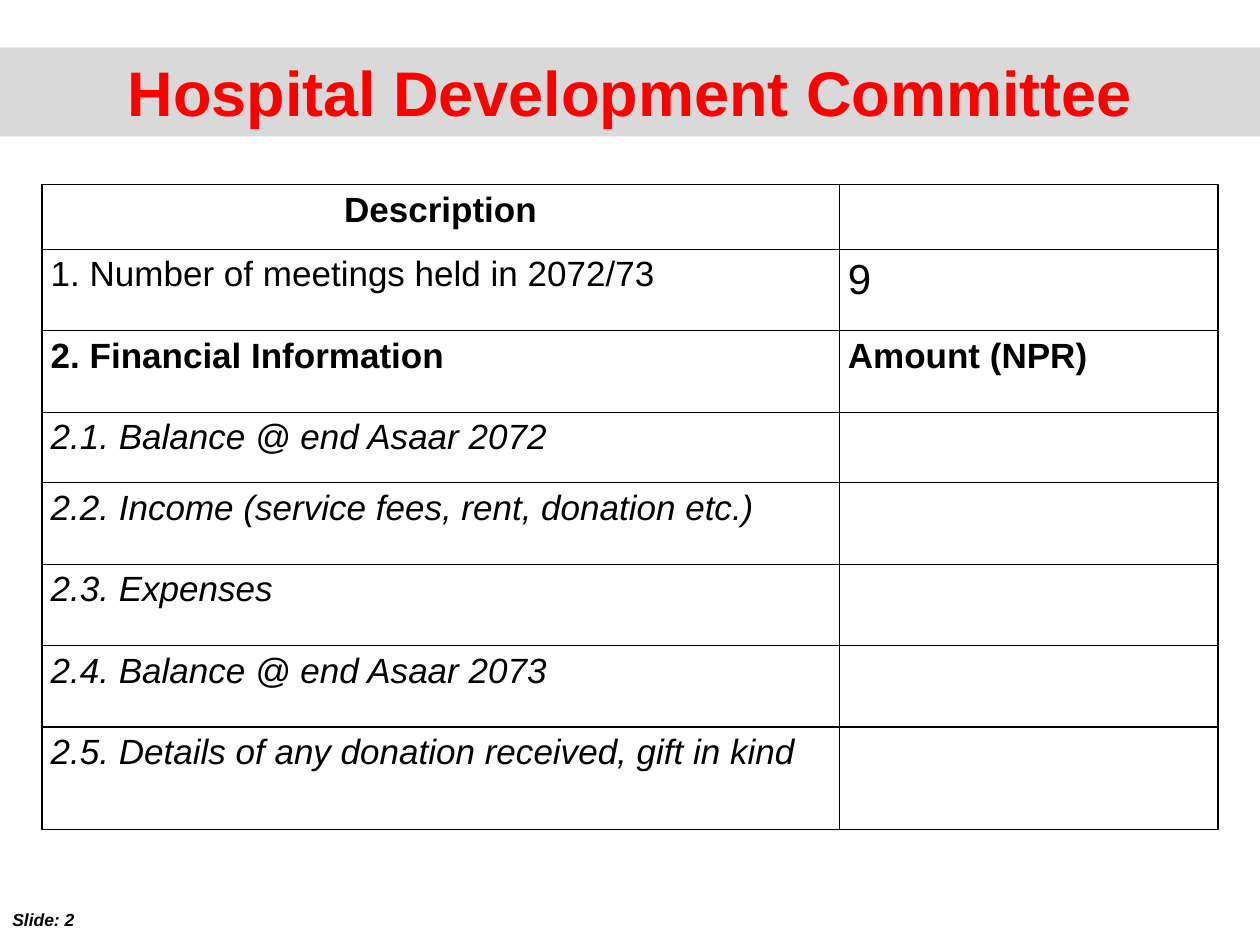
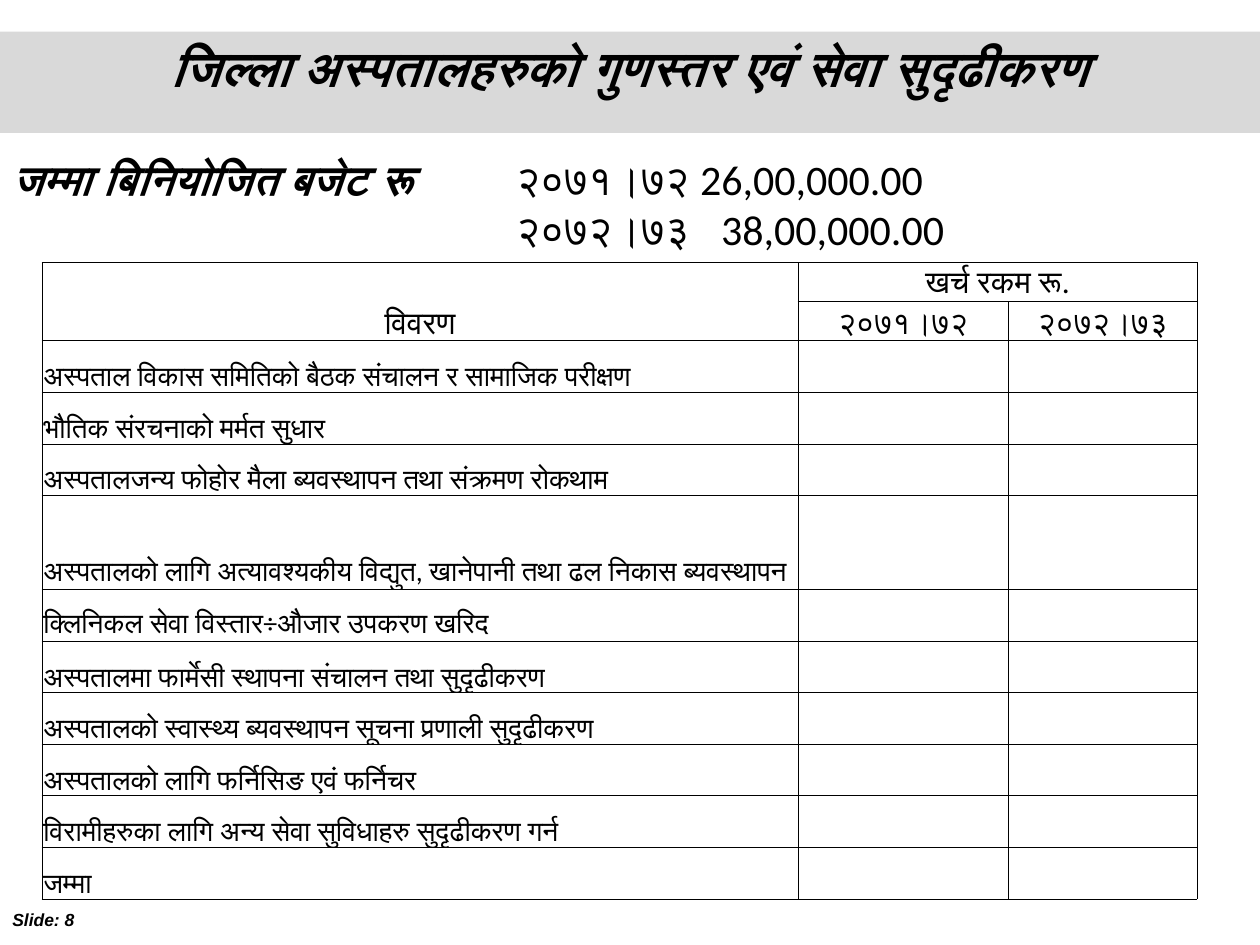
import pptx
import pptx.dml.color
import pptx.enum.text
import pptx.oxml
import pptx.oxml.ns
import pptx.util
import lxml.etree

Pt = pptx.util.Pt
ALIGN = pptx.enum.text.PP_ALIGN
ANCHOR = pptx.enum.text.MSO_ANCHOR
BLACK, WHITE, RED, BAND = "000000", "FFFFFF", "FF0000", "D9D9D9"


def color(value):
    return pptx.dml.color.RGBColor.from_string(value)


def add_child(parent, tag, **attributes):
    values = {name: str(value) for name, value in attributes.items()}
    return lxml.etree.SubElement(parent, pptx.oxml.ns.qn(tag), values)


class SlideBuilder:
    def __init__(self, deck):
        self.deck = deck
        self.slide = None

    def start(self, number):
        self.slide = self.deck.slides.add_slide(self.deck.slide_layouts[5])
        frame = self.text_box(0, 516, 66, 19.5)
        self.run(frame.paragraphs[0], f"Slide: {number}", 10, bold=True, italic=True)

    def run(self, para, text, size, font="Arial", fill=BLACK, bold=False, italic=False):
        span = para.add_run()
        span.text = text
        span.font.name = font
        span.font.size = Pt(size)
        span.font.bold = bold
        span.font.italic = italic
        span.font.color.rgb = color(fill)

    def title(self, text, top, height, size, **style):
        box = self.slide.shapes.title
        box.left, box.top, box.width, box.height = Pt(0), Pt(top), Pt(720), Pt(height)
        box.fill.solid()
        box.fill.fore_color.rgb = color(BAND)
        frame = box.text_frame
        frame.auto_size = pptx.enum.text.MSO_AUTO_SIZE.NONE
        frame.vertical_anchor = ANCHOR.TOP
        para = frame.paragraphs[0]
        para.alignment = ALIGN.CENTER
        self.run(para, text, size, bold=True, **style)

    def text_box(self, left, top, width, height):
        box = self.slide.shapes.add_textbox(Pt(left), Pt(top), Pt(width), Pt(height))
        box.text_frame.word_wrap = True
        return box.text_frame

    def tab_stops(self, para, *positions):
        stops = add_child(para._p.get_or_add_pPr(), "a:tabLst")
        for position in positions:
            add_child(stops, "a:tab", pos=int(Pt(position)), algn="l")

    def table(self, left, top, widths, heights, border, margins, anchor):
        frame = self.slide.shapes.add_table(
            len(heights), len(widths), Pt(left), Pt(top), Pt(sum(widths)), Pt(sum(heights)))
        table = frame.table
        table.first_row = table.horz_banding = False
        for column, width in zip(table.columns, widths):
            column.width = Pt(width)
        for row, height in zip(table.rows, heights):
            row.height = Pt(height)
        for cell in table.iter_cells():
            self.cell_style(cell, border, margins, anchor)
        return table

    def cell_style(self, cell, border, margins, anchor):
        cell.margin_left = cell.margin_right = Pt(margins[0])
        cell.margin_top, cell.margin_bottom = Pt(margins[1]), Pt(0)
        cell.vertical_anchor = anchor
        properties = cell._tc.get_or_add_tcPr()
        for edge in ("a:lnL", "a:lnR", "a:lnT", "a:lnB"):
            line = add_child(properties, edge, w=int(Pt(border)))
            add_child(add_child(line, "a:solidFill"), "a:srgbClr", val=BLACK)
        cell.fill.solid()
        cell.fill.fore_color.rgb = color(WHITE)

    def cell_text(self, cell, text, size, align=ALIGN.LEFT, spacing=None, **style):
        para = cell.text_frame.paragraphs[0]
        para.alignment = align
        if spacing:
            para.line_spacing = spacing
        self.run(para, text, size, **style)


def committee_slide(builder):
    builder.start(2)
    builder.title("Hospital Development Committee", 27, 51, 36, fill=RED)
    heights = [37, 46.5, 46.5, 40.5, 46.5, 46.5, 46.5, 58.5]
    table = builder.table(24, 105.5, [455.5, 216.5], heights, 0.75, (5, 0), ANCHOR.TOP)
    bold, italic = {"bold": True}, {"italic": True}
    descriptions = [
        ("Description", {"bold": True, "align": ALIGN.CENTER}),
        ("1. Number of meetings held in 2072/73", {}),
        ("2. Financial Information", bold),
        ("2.1. Balance @ end Asaar 2072", italic),
        ("2.2. Income (service fees, rent, donation etc.)", italic),
        ("2.3. Expenses", italic),
        ("2.4. Balance @ end Asaar 2073", italic),
        ("2.5. Details of any donation received, gift in kind", italic),
    ]
    for row, (text, style) in enumerate(descriptions):
        builder.cell_text(table.cell(row, 0), text, 20, spacing=1.15, **style)
    builder.cell_text(table.cell(1, 1), "9", 24, spacing=1.15)
    builder.cell_text(table.cell(2, 1), "Amount (NPR)", 20, spacing=1.15, **bold)


def budget_slide(builder):
    builder.start(8)
    builder.title("जिल्ला अस्पतालहरुको गुणस्तर एवं सेवा सुदृढीकरण", 18, 58, 28,
                  font="Calibri", italic=True)

    frame = builder.text_box(0, 84, 696, 65.5)
    first, second = frame.paragraphs[0], frame.add_paragraph()
    for para in (first, second):
        builder.tab_stops(para, 288, 405)
    builder.run(first, "जम्मा बिनियोजित बजेट रू\t", 24, bold=True, italic=True)
    builder.run(first, "२०७१।७२ 26,00,000.00", 24, font="Calibri")
    builder.run(second, "\t२०७२।७३\t38,00,000.00", 24, font="Calibri")

    expenses = [
        "अस्पताल विकास समितिको बैठक संचालन र सामाजिक परीक्षण",
        "भौतिक संरचनाको मर्मत सुधार",
        "अस्पतालजन्य फोहोर मैला ब्यवस्थापन तथा संक्रमण रोकथाम",
        "अस्पतालको लागि अत्यावश्यकीय विद्युत, खानेपानी तथा ढल निकास ब्यवस्थापन",
        "क्लिनिकल सेवा विस्तार÷औजार उपकरण खरिद",
        "अस्पतालमा फार्मेसी स्थापना संचालन तथा सुदृढीकरण",
        "अस्पतालको स्वास्थ्य ब्यवस्थापन सूचना प्रणाली सुदृढीकरण",
        "अस्पतालको लागि फर्निसिङ एवं फर्निचर",
        "विरामीहरुका लागि अन्य सेवा सुविधाहरु सुदृढीकरण गर्न",
        "जम्मा",
    ]
    heights = [22.3] * 2 + [29.5] * 3 + [53.7] + [29.5] * 6
    table = builder.table(24, 150, [432, 120, 108], heights, 0.5, (0.75, 0.75), ANCHOR.BOTTOM)
    table.cell(0, 0).merge(table.cell(1, 0))
    table.cell(0, 1).merge(table.cell(0, 2))
    headings = [(0, 0, "विवरण"), (0, 1, "खर्च रकम रू."), (1, 1, "२०७१।७२"), (1, 2, "२०७२।७३")]
    for row, column, text in headings:
        builder.cell_text(table.cell(row, column), text, 18, ALIGN.CENTER, font="Calibri")
    for row, text in enumerate(expenses, start=2):
        builder.cell_text(table.cell(row, 0), text, 16, font="Calibri")


def main():
    deck = pptx.Presentation()
    deck.slide_width, deck.slide_height = Pt(720), Pt(540)
    builder = SlideBuilder(deck)
    committee_slide(builder)
    budget_slide(builder)
    deck.save("out.pptx")


if __name__ == "__main__":
    main()
